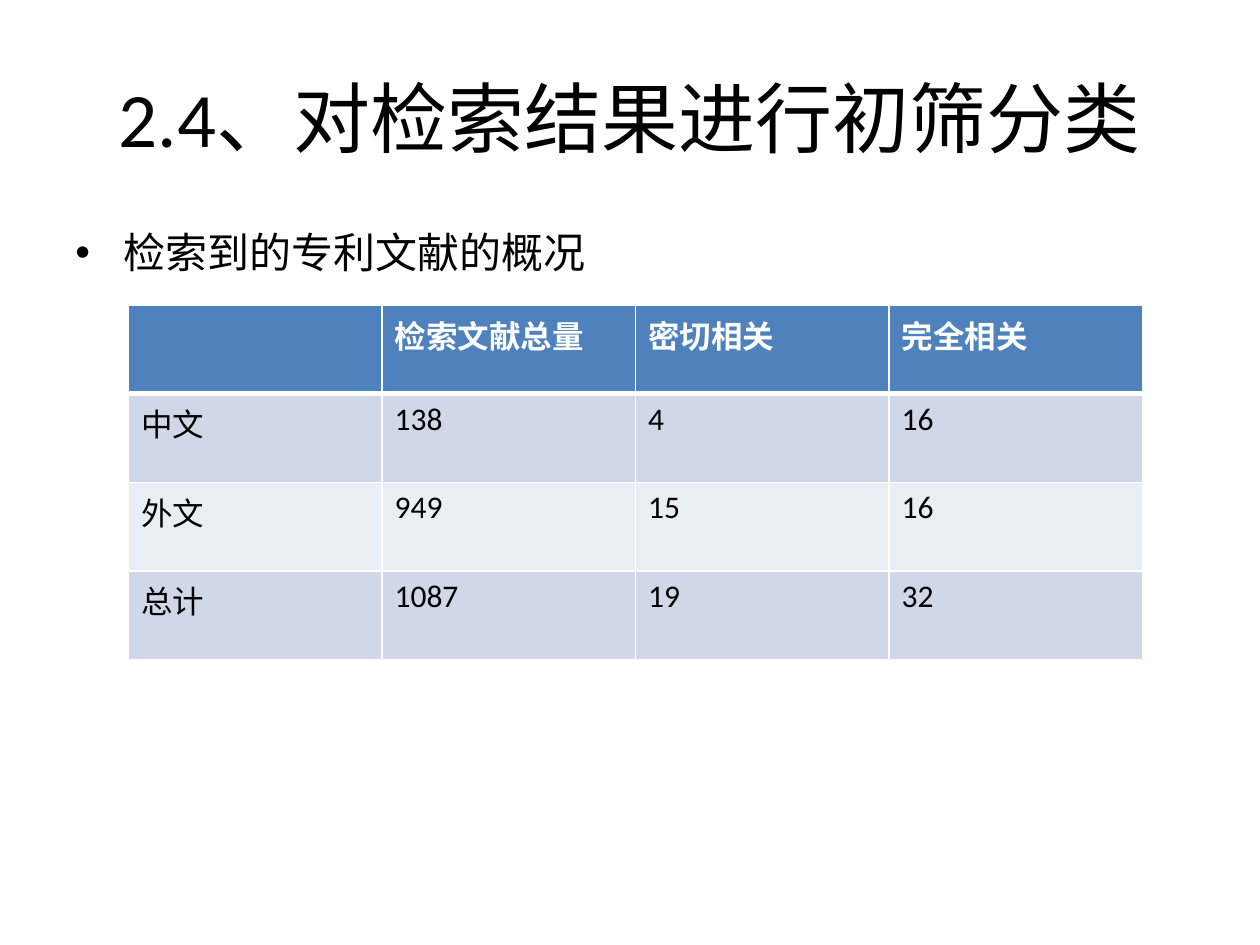
"""Build a slide that summarises the first screening of patent search results."""
from dataclasses import dataclass

import lxml.etree
import pptx
import pptx.dml.color
import pptx.enum.text
import pptx.oxml.ns
import pptx.util

WIDTH, HEIGHT = 10, 7.5


@dataclass(frozen=True)
class Theme:
    font: str = "Calibri"
    ink: str = "000000"
    white: str = "FFFFFF"
    header: str = "4F81BD"
    bands: tuple[str, str] = ("D0D8E8", "E9EDF4")
    title_size: int = 44
    body_size: int = 24
    table_size: int = 18
    rule: int = 1
    header_rule: int = 3


@dataclass(frozen=True)
class Box:
    """A rectangle given in shares of the slide's width and height."""
    left: float
    top: float
    width: float
    height: float

    def emu(self) -> tuple[int, int, int, int]:
        inch = pptx.util.Inches
        return (inch(self.left * WIDTH), inch(self.top * HEIGHT),
                inch(self.width * WIDTH), inch(self.height * HEIGHT))


@dataclass(frozen=True)
class TextStyle:
    size: int
    color: str
    bold: bool = False


THEME = Theme()
TITLE_BOX = Box(0.05, 0.04, 0.9, 1 / 6)
BODY_BOX = Box(0.05, 0.233, 0.9, 0.66)
TABLE_BOX = Box(0.102, 0.323, 0.805, 0.375)
ROWS = (
    ("", "检索文献总量", "密切相关", "完全相关"),
    ("中文", "138", "4", "16"),
    ("外文", "949", "15", "16"),
    ("总计", "1087", "19", "32"),
)


def rgb(color: str) -> pptx.dml.color.RGBColor:
    return pptx.dml.color.RGBColor.from_string(color)


def set_text(tf, text: str, style: TextStyle):
    """Write one paragraph, format its runs and return it."""
    tf.text = text
    p = tf.paragraphs[0]
    for r in p.runs:
        r.font.name = THEME.font
        r.font.size = pptx.util.Pt(style.size)
        r.font.bold = style.bold
        r.font.color.rgb = rgb(style.color)
    return p


def add_text(slide, box: Box, text: str, style: TextStyle):
    """Add a wrapping text box and return its text frame and paragraph."""
    tf = slide.shapes.add_textbox(*box.emu()).text_frame
    tf.word_wrap = True
    return tf, set_text(tf, text, style)


def add_bullet(p, indent: float) -> None:
    """Give a paragraph a round bullet with a hanging indent in inches."""
    pPr = p._p.get_or_add_pPr()
    emu = pptx.util.Inches(indent)
    pPr.set("marL", str(emu))
    pPr.set("indent", str(-emu))
    qn = pptx.oxml.ns.qn
    lxml.etree.SubElement(pPr, qn("a:buFont"), typeface="Arial")
    lxml.etree.SubElement(pPr, qn("a:buChar"), char="•")


def set_border(cell, side: str, width: int) -> None:
    """Draw one white edge of a cell."""
    qn = pptx.oxml.ns.qn
    tcPr = cell._tc.get_or_add_tcPr()
    ln = lxml.etree.SubElement(tcPr, qn(f"a:ln{side}"), w=str(pptx.util.Pt(width)))
    fill = lxml.etree.SubElement(ln, qn("a:solidFill"))
    lxml.etree.SubElement(fill, qn("a:srgbClr"), val=THEME.white)


def add_table(slide, box: Box, rows: tuple[tuple[str, ...], ...]) -> None:
    """Add a table with a header row and banded body rows."""
    table = slide.shapes.add_table(len(rows), len(rows[0]), *box.emu()).table
    header_style = TextStyle(THEME.table_size, THEME.white, True)
    body_style = TextStyle(THEME.table_size, THEME.ink)
    for i, row in enumerate(rows):
        color = THEME.bands[(i - 1) % 2] if i else THEME.header
        widths = {
            "L": THEME.rule,
            "R": THEME.rule,
            "T": THEME.header_rule if i == 1 else THEME.rule,
            "B": THEME.header_rule if i == 0 else THEME.rule,
        }
        for j, text in enumerate(row):
            cell = table.cell(i, j)
            set_text(cell.text_frame, text, body_style if i else header_style)
            for side, width in widths.items():
                set_border(cell, side, width)
            cell.fill.solid()
            cell.fill.fore_color.rgb = rgb(color)


def main() -> None:
    prs = pptx.Presentation()
    prs.slide_width = pptx.util.Inches(WIDTH)
    prs.slide_height = pptx.util.Inches(HEIGHT)
    slide = prs.slides.add_slide(prs.slide_layouts[6])

    tf, p = add_text(slide, TITLE_BOX, "2.4、对检索结果进行初筛分类",
                     TextStyle(THEME.title_size, THEME.ink))
    tf.vertical_anchor = pptx.enum.text.MSO_ANCHOR.MIDDLE
    p.alignment = pptx.enum.text.PP_ALIGN.CENTER

    _, p = add_text(slide, BODY_BOX, "检索到的专利文献的概况",
                    TextStyle(THEME.body_size, THEME.ink))
    p.space_before = pptx.util.Pt(0.2 * THEME.body_size)
    add_bullet(p, 0.38)

    add_table(slide, TABLE_BOX, ROWS)
    prs.save("out.pptx")


if __name__ == "__main__":
    main()
